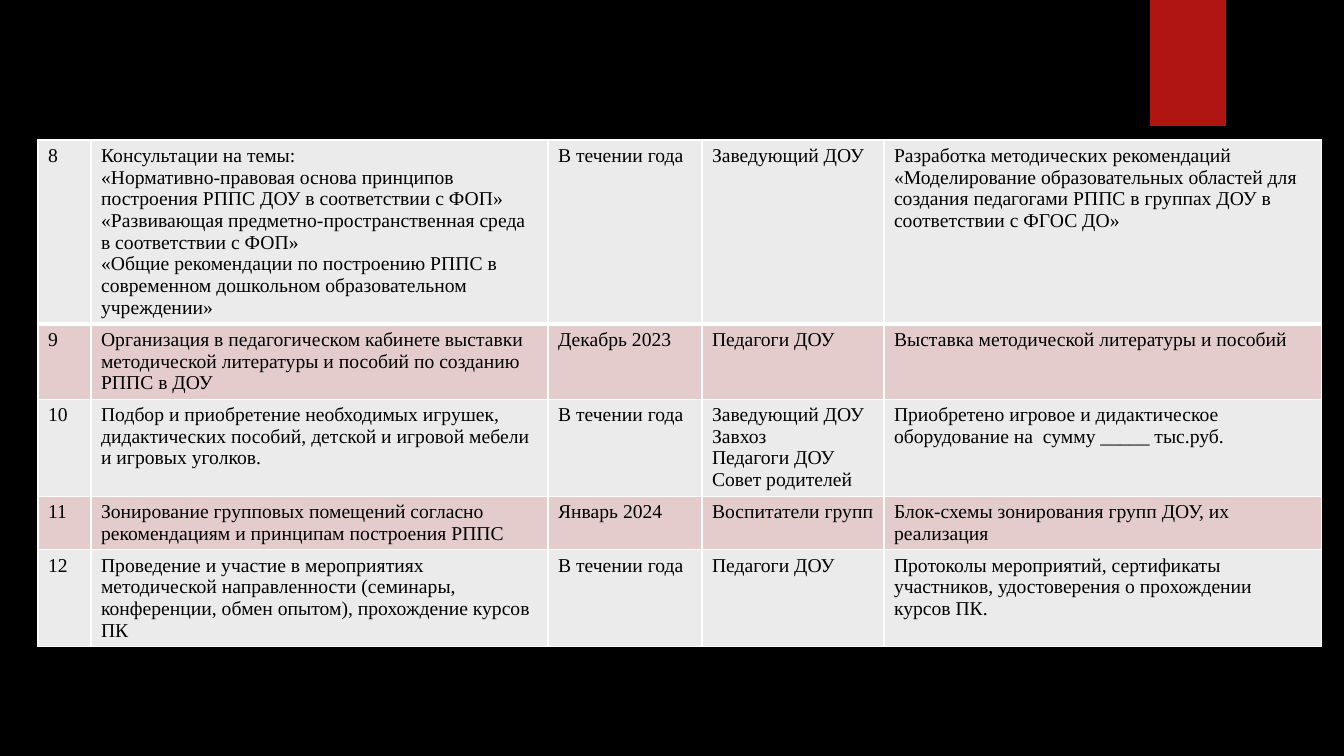
from lxml import etree
from pptx import Presentation
from pptx.dml.color import RGBColor
from pptx.enum.shapes import MSO_SHAPE
from pptx.oxml.ns import qn
from pptx.util import Emu, Pt

RECTANGLE = MSO_SHAPE.RECTANGLE
PAGE_WIDTH, PAGE_HEIGHT = 1344, 756
EMU_PER_PX = 12192000 / PAGE_WIDTH

BLACK, WHITE, RED = "000000", "FFFFFF", "B01513"
BAND_FILLS = ["EBEBEB", "E4CCCC"]
FONT_NAME, FONT_SIZE = "Times New Roman", 14

COLUMN_WIDTHS = [53, 457, 154, 182, 438]
ROW_HEIGHTS = [184, 75, 97, 53, 97]
PLAN_ROWS = [
    ["8",
     "Консультации на темы:\n"
     "«Нормативно-правовая основа принципов построения РППС ДОУ в соответствии с ФОП»\n"
     "«Развивающая предметно-пространственная среда в соответствии с ФОП»\n"
     "«Общие рекомендации по построению РППС в современном дошкольном "
     "образовательном учреждении»",
     "В течении года",
     "Заведующий ДОУ",
     "Разработка методических рекомендаций «Моделирование образовательных областей "
     "для создания педагогами РППС в группах ДОУ в соответствии с ФГОС ДО»"],
    ["9",
     "Организация в педагогическом кабинете выставки методической литературы "
     "и пособий по созданию РППС в ДОУ",
     "Декабрь 2023",
     "Педагоги ДОУ",
     "Выставка методической литературы и пособий"],
    ["10",
     "Подбор и приобретение необходимых игрушек, дидактических пособий, "
     "детской и игровой мебели и игровых уголков.",
     "В течении года",
     "Заведующий ДОУ\nЗавхоз\nПедагоги ДОУ\nСовет родителей",
     "Приобретено игровое и дидактическое оборудование на  сумму _____ тыс.руб."],
    ["11",
     "Зонирование групповых помещений согласно рекомендациям и принципам построения РППС",
     "Январь 2024",
     "Воспитатели групп",
     "Блок-схемы зонирования групп ДОУ, их реализация"],
    ["12",
     "Проведение и участие в мероприятиях методической направленности "
     "(семинары, конференции, обмен опытом), прохождение курсов ПК",
     "В течении года",
     "Педагоги ДОУ",
     "Протоколы мероприятий, сертификаты участников, удостоверения о прохождении курсов ПК."],
]


def px(length):
    return Emu(round(length * EMU_PER_PX))


def color(hex_code):
    return RGBColor.from_string(hex_code)


def paint(fill, hex_code):
    fill.solid()
    fill.fore_color.rgb = color(hex_code)


def add_rectangle(page, left, top, width, height, hex_code):
    box = page.shapes.add_shape(RECTANGLE, px(left), px(top), px(width), px(height))
    box.shadow.inherit = False
    paint(box.fill, hex_code)
    box.line.fill.background()


def add_borders(cell, top_width, bottom_width):
    """Draw white borders; widths are points, and the sides are always 1."""
    properties = cell._tc.get_or_add_tcPr()
    sides = {"a:lnL": 1, "a:lnR": 1, "a:lnT": top_width, "a:lnB": bottom_width}
    for tag, width in sides.items():
        line = etree.SubElement(properties, qn(tag), w=str(Pt(width)))
        solid = etree.SubElement(line, qn("a:solidFill"))
        etree.SubElement(solid, qn("a:srgbClr"), val=WHITE)


def fill_cell(cell, text, hex_code):
    paint(cell.fill, hex_code)
    cell.text = text
    for para in cell.text_frame.paragraphs:
        para.font.name = FONT_NAME
        para.font.size = Pt(FONT_SIZE)
        para.font.color.rgb = color(BLACK)


def add_plan_table(page, left, top):
    frame = page.shapes.add_table(
        len(PLAN_ROWS), len(COLUMN_WIDTHS), px(left), px(top),
        px(sum(COLUMN_WIDTHS)), px(sum(ROW_HEIGHTS)))
    table = frame.table
    table.first_row = False
    table.horz_banding = False
    for column, width in zip(table.columns, COLUMN_WIDTHS):
        column.width = px(width)
    for row, height in zip(table.rows, ROW_HEIGHTS):
        row.height = px(height)
    for row_index, texts in enumerate(PLAN_ROWS):
        top_width = 3 if row_index == 1 else 1
        bottom_width = 3 if row_index == 0 else 1
        for column_index, text in enumerate(texts):
            cell = table.cell(row_index, column_index)
            add_borders(cell, top_width, bottom_width)
            fill_cell(cell, text, BAND_FILLS[row_index % 2])


def main():
    deck = Presentation()
    deck.slide_width, deck.slide_height = px(PAGE_WIDTH), px(PAGE_HEIGHT)
    page = deck.slides.add_slide(deck.slide_layouts[6])
    paint(page.background.fill, BLACK)
    add_rectangle(page, 1150, 0, 76, 126, RED)
    add_plan_table(page, 38, 140)
    deck.save("out.pptx")


if __name__ == "__main__":
    main()
